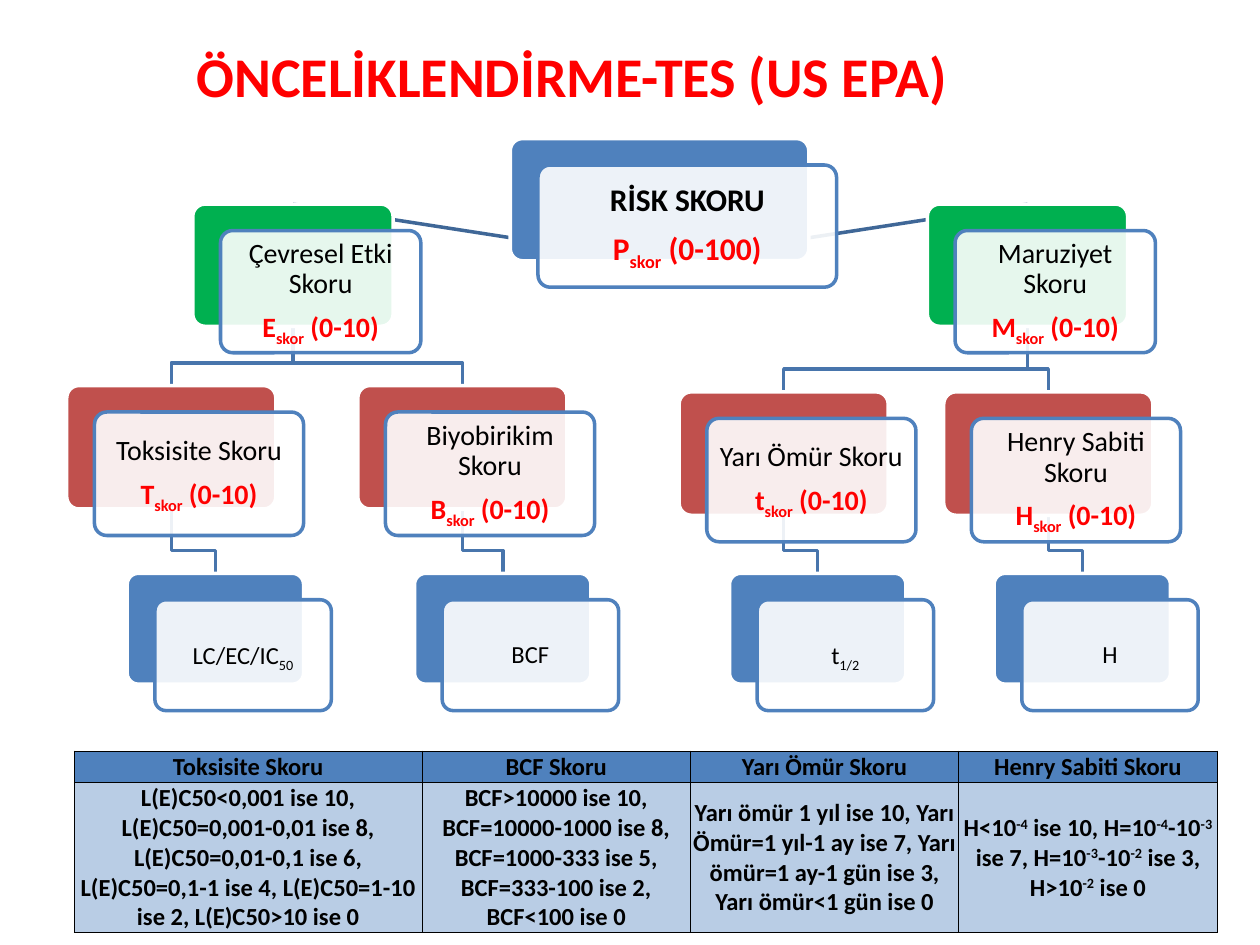
from lxml.etree import SubElement
from pptx import Presentation
from pptx.dml.color import RGBColor
from pptx.enum.shapes import MSO_CONNECTOR, MSO_SHAPE
from pptx.enum.text import MSO_ANCHOR, PP_ALIGN
from pptx.oxml.ns import qn
from pptx.util import Inches, Pt

BLACK = RGBColor(0x00, 0x00, 0x00)
WHITE = RGBColor(0xFF, 0xFF, 0xFF)
RED = RGBColor(0xFF, 0x00, 0x00)
BLUE = RGBColor(0x4F, 0x81, 0xBD)
GREEN = RGBColor(0x00, 0xB0, 0x50)
BRICK = RGBColor(0xC0, 0x50, 0x4D)
PALE_BLUE = RGBColor(0xB9, 0xCD, 0xE5)
ROOT_LINE = RGBColor(0x3F, 0x67, 0x97)
BRANCH_LINE = RGBColor(0x48, 0x75, 0xAC)

FONT = "Calibri"
SUB, SUPER = -25, 30
CARD_OFFSET = (0.22, 0.21)
BEND = 0.18

ROOT = (4.05, 1.1, 2.37, 0.97)
SCORE_SIZE = (1.59, 0.97)
FACTOR_SIZE = (1.66, 0.98)
INPUT_SIZE = (1.4, 0.88)
SCORE_TOP, INPUT_TOP = 1.62, 4.55

BRANCHES = [
    (1.53, "Çevresel Etki Skoru", "E", 3.06, [
        (0.53, "Toksisite Skoru", "T", 1.01, [("LC/EC/IC", 0), ("50", SUB)]),
        (2.84, "Biyobirikim Skoru", "B", 3.29, [("BCF", 0)]),
    ]),
    (7.36, "Maruziyet Skoru", "M", 3.11, [
        (5.39, "Yarı Ömür Skoru", "t", 5.79, [("t", 0), ("1/2", SUB)]),
        (7.49, "Henry Sabiti Skoru", "H", 7.89, [("H", 0)]),
    ]),
]

TABLE_COLUMNS = [
    (2.76, "Toksisite Skoru",
     [("L(E)C50<0,001 ise 10, L(E)C50=0,001-0,01 ise 8, L(E)C50=0,01-0,1 ise 6, "
       "L(E)C50=0,1-1 ise 4, L(E)C50=1-10 ise 2, L(E)C50>10 ise 0", 0)]),
    (2.13, "BCF Skoru",
     [("BCF>10000 ise 10, BCF=10000-1000 ise 8, BCF=1000-333 ise 5, "
       "BCF=333-100 ise 2, BCF<100 ise 0", 0)]),
    (2.13, "Yarı Ömür Skoru",
     [("Yarı ömür 1 yıl ise 10, Yarı Ömür=1 yıl-1 ay ise 7, "
       "Yarı ömür=1 ay-1 gün ise 3, Yarı ömür<1 gün ise 0", 0)]),
    (2.05, "Henry Sabiti Skoru",
     [("H<10", 0), ("-4", SUPER), (" ise 10, H=10", 0), ("-4", SUPER),
      ("-10", 0), ("-3", SUPER), (" ise 7, H=10", 0), ("-3", SUPER),
      ("-10", 0), ("-2", SUPER), (" ise 3, H>10", 0), ("-2", SUPER),
      (" ise 0", 0)]),
]


def add_runs(p, runs, size, color=BLACK, bold=False):
    for text, baseline in runs:
        r = p.add_run()
        r.text = text
        r.font.name = FONT
        r.font.size = Pt(size)
        r.font.bold = bold
        r.font.color.rgb = color
        if baseline:
            r.font._element.set("baseline", str(baseline * 1000))


def add_card(s, box, offset=(0, 0)):
    x, y, w, h = box
    sp = s.shapes.add_shape(
        MSO_SHAPE.ROUNDED_RECTANGLE, Inches(x + offset[0]), Inches(y + offset[1]),
        Inches(w), Inches(h))
    sp.adjustments[0] = 0.1
    sp.shadow.inherit = False
    sp.fill.solid()
    sp.line.width = Pt(2)
    return sp


def add_node(s, box, color, lines, size, inset=0.07):
    back = add_card(s, box)
    back.fill.fore_color.rgb = color
    back.line.color.rgb = WHITE

    front = add_card(s, box, CARD_OFFSET)
    front.fill.fore_color.rgb = WHITE
    front.line.color.rgb = BLUE
    rgb = front.fill._xPr.find(qn("a:solidFill")).find(qn("a:srgbClr"))
    SubElement(rgb, qn("a:alpha"), val="90000")

    tf = front.text_frame
    tf.word_wrap = True
    tf.vertical_anchor = MSO_ANCHOR.MIDDLE
    tf.margin_left = tf.margin_right = tf.margin_top = tf.margin_bottom = Inches(inset)
    for i, (runs, text_color, bold) in enumerate(lines):
        p = tf.add_paragraph() if i else tf.paragraphs[0]
        p.alignment = PP_ALIGN.CENTER
        p.line_spacing = 0.9
        after = SubElement(p._p.get_or_add_pPr(), qn("a:spcAft"))
        SubElement(after, qn("a:spcPct"), val="35000")
        add_runs(p, runs, size, text_color, bold)


def score_lines(name, symbol, limit=10, bold=False):
    score = [(symbol, 0), ("skor", SUB), (f" (0-{limit})", 0)]
    return [([(name, 0)], BLACK, bold), (score, RED, True)]


def ends(parent, child):
    px, py, pw, ph = parent
    cx, cy, cw, _ = child
    return px + pw / 2, py + ph, cx + cw / 2, cy


def add_root_line(s, parent, child):
    line = s.shapes.add_connector(
        MSO_CONNECTOR.STRAIGHT, *[Inches(v) for v in ends(parent, child)])
    line.line.color.rgb = ROOT_LINE
    line.line.width = Pt(2)
    SubElement(line._element.spPr, qn("a:effectLst"))


def add_elbow(s, parent, child):
    x1, y1, x2, y2 = ends(parent, child)
    points = [(x1, y1), (x1, y2 - BEND), (x2, y2 - BEND), (x2, y2)]
    start, *rest = [(Inches(x), Inches(y)) for x, y in points]
    builder = s.shapes.build_freeform(*start)
    builder.add_line_segments(rest, close=False)
    sp = builder.convert_to_shape()
    sp.shadow.inherit = False
    sp.fill.background()
    sp.line.color.rgb = BRANCH_LINE
    sp.line.width = Pt(2)


def add_tree(s):
    nodes = [(ROOT, BLUE, score_lines("RİSK SKORU", "P", 100, True), 18)]
    for x, name, symbol, factor_top, factors in BRANCHES:
        score = (x, SCORE_TOP, *SCORE_SIZE)
        add_root_line(s, ROOT, score)
        nodes.append((score, GREEN, score_lines(name, symbol), 16))
        for fx, factor_name, factor_symbol, ix, runs in factors:
            factor = (fx, factor_top, *FACTOR_SIZE)
            source = (ix, INPUT_TOP, *INPUT_SIZE)
            add_elbow(s, score, factor)
            add_elbow(s, factor, source)
            nodes.append((factor, BRICK, score_lines(factor_name, factor_symbol), 16))
            nodes.append((source, BLUE, [(runs, BLACK, False)], 14, 0.06))
    for node in nodes:
        add_node(s, *node)


def fill_cell(cell, runs, color):
    tcPr = cell._tc.get_or_add_tcPr()
    for side in ("lnL", "lnR", "lnT", "lnB"):
        ln = SubElement(tcPr, qn(f"a:{side}"), w=str(Pt(0.5)))
        SubElement(SubElement(ln, qn("a:solidFill")), qn("a:srgbClr"), val=str(BLACK))
    cell.fill.solid()
    cell.fill.fore_color.rgb = color
    cell.vertical_anchor = MSO_ANCHOR.MIDDLE
    cell.margin_left = cell.margin_right = cell.margin_top = Inches(0.01)
    cell.margin_bottom = 0
    p = cell.text_frame.paragraphs[0]
    p.alignment = PP_ALIGN.CENTER
    add_runs(p, runs, 14, bold=True)


def add_score_table(s):
    width = sum(column[0] for column in TABLE_COLUMNS)
    table = s.shapes.add_table(
        2, len(TABLE_COLUMNS), Inches(0.59), Inches(5.96),
        Inches(width), Inches(1.43)).table
    table.rows[0].height = Inches(0.24)
    table.rows[1].height = Inches(1.19)
    for i, (column_width, heading, rules) in enumerate(TABLE_COLUMNS):
        table.columns[i].width = Inches(column_width)
        fill_cell(table.cell(0, i), [(heading, 0)], BLUE)
        fill_cell(table.cell(1, i), rules, PALE_BLUE)


def add_title(s, text):
    sp = s.shapes.add_textbox(Inches(1.46), Inches(0.28), Inches(6.85), Inches(0.64))
    tf = sp.text_frame
    tf.word_wrap = True
    add_runs(tf.paragraphs[0], [(text, 0)], 32, RED, True)


def main():
    prs = Presentation()
    prs.slide_width = Inches(10)
    prs.slide_height = Inches(7.5)
    s = prs.slides.add_slide(prs.slide_layouts[6])
    add_tree(s)
    add_score_table(s)
    add_title(s, "ÖNCELİKLENDİRME-TES (US EPA)")
    prs.save("out.pptx")


if __name__ == "__main__":
    main()
